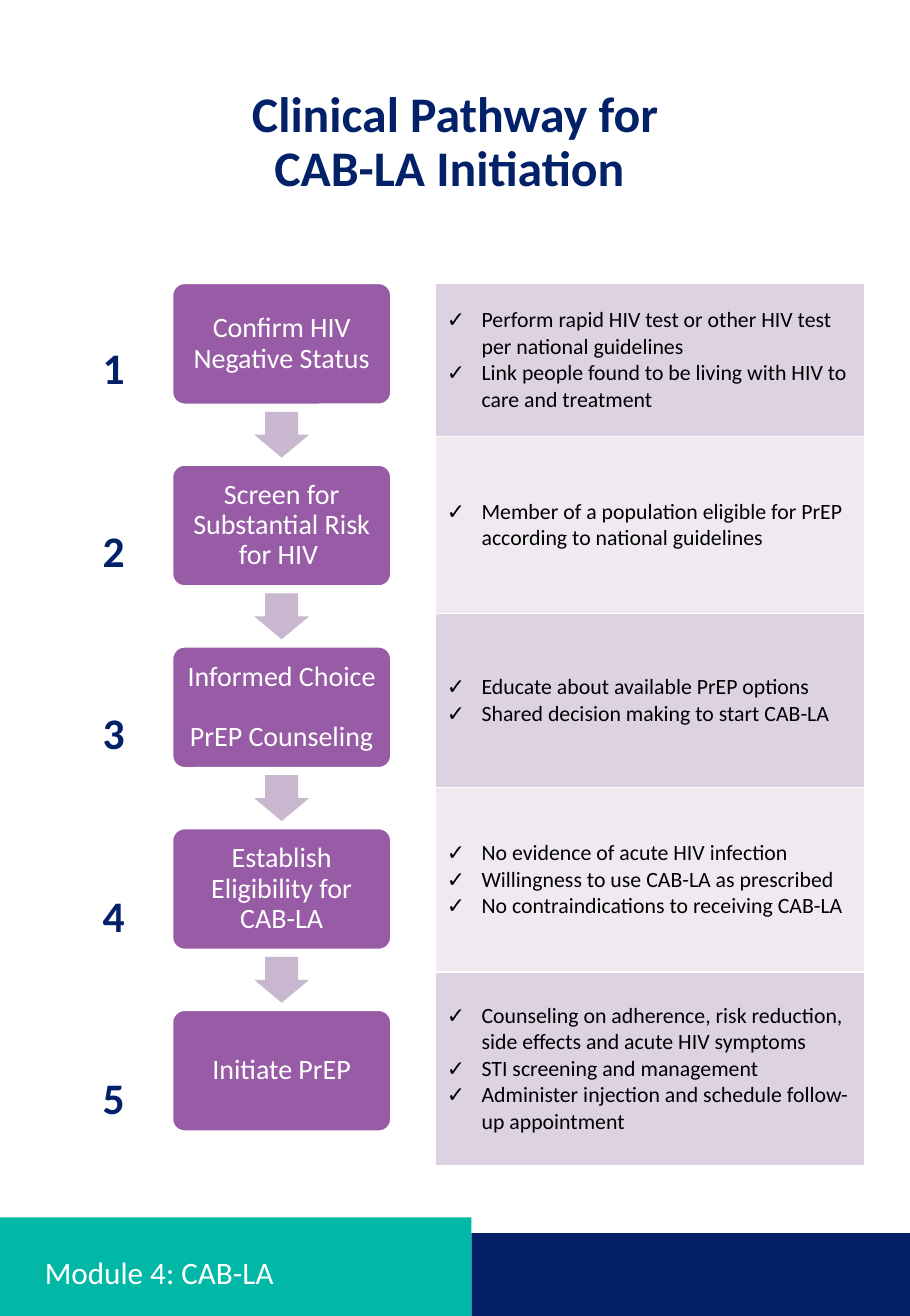
from lxml import etree
from pptx import Presentation
from pptx.dml.color import RGBColor
from pptx.enum.shapes import MSO_SHAPE
from pptx.enum.text import MSO_ANCHOR, MSO_AUTO_SIZE, PP_ALIGN
from pptx.oxml.ns import qn
from pptx.util import Inches, Pt

ROUNDED, DOWN_ARROW, RECTANGLE = (
    MSO_SHAPE.ROUNDED_RECTANGLE, MSO_SHAPE.DOWN_ARROW, MSO_SHAPE.RECTANGLE)
TOP, MIDDLE = MSO_ANCHOR.TOP, MSO_ANCHOR.MIDDLE
LEFT, CENTER = PP_ALIGN.LEFT, PP_ALIGN.CENTER

PAGE_WIDTH, PAGE_HEIGHT = 65 / 8, 47 / 4
NAVY, TEAL, PURPLE, LILAC = "022169", "00B8A5", "975CA5", "C9B6CF"
WHITE, BLACK = "FFFFFF", "000000"
BANDS = ("DDD2E1", "EFEAF0")

# Step label, height of its checklist row, checklist
STEPS = [
    ("Confirm HIV Negative Status", 1.37, [
        "Perform rapid HIV test or other HIV test per national guidelines",
        "Link people found to be living with HIV to care and treatment"]),
    ("Screen for Substantial Risk for HIV ", 1.58, [
        "Member of a population eligible for PrEP according to national guidelines"]),
    ("Informed Choice \vPrEP Counseling", 1.55, [
        "Educate about available PrEP options",
        "Shared decision making to start CAB-LA"]),
    ("Establish Eligibility for CAB-LA", 1.65, [
        "No evidence of acute HIV infection",
        "Willingness to use CAB-LA as prescribed",
        "No contraindications to receiving CAB-LA"]),
    ("Initiate PrEP", 1.73, [
        "Counseling on adherence, risk reduction, side effects and acute HIV symptoms",
        "STI screening and management",
        "Administer injection and schedule follow-up appointment"]),
]

# Columns and rows of the pathway
PATHWAY_TOP, LAST_STEP_TOP = 2.53, 9.02
STEP_LEFT, STEP_WIDTH, STEP_HEIGHT = 1.54, 1.95, 1.08
STEP_PITCH = (LAST_STEP_TOP - PATHWAY_TOP) / (len(STEPS) - 1)
ARROW_WIDTH, ARROW_HEIGHT = 0.49, 0.41
NUMBER_LEFT, NUMBER_TOP, NUMBER_WIDTH, NUMBER_PITCH = 0.77, 2.3, 0.49, 1.63
CHECK_LEFT, CHECK_WIDTH, CHECK_INDENT = 3.89, 3.83, 0.31


def color(hex_string):
    return RGBColor.from_string(hex_string)


def inches(*lengths):
    return [Inches(length) for length in lengths]


def style_paragraph(para, size, ink, bold=False, align=LEFT, spacing=0.9):
    para.alignment = align
    para.line_spacing = spacing
    para.space_before = Pt(0)
    font = para.font
    font.name, font.size, font.bold = "Calibri", Pt(size), bold
    font.color.rgb = color(ink)


def set_bullet(para, character):
    properties = para._p.get_or_add_pPr()
    properties.set("marL", str(Inches(CHECK_INDENT)))
    properties.set("indent", str(-Inches(CHECK_INDENT)))
    etree.SubElement(properties, qn("a:buFont")).set("typeface", "Calibri")
    etree.SubElement(properties, qn("a:buChar")).set("char", character)


def fill_placeholder(holder, text, place, anchor, **style):
    holder.left, holder.top, holder.width, holder.height = inches(*place)
    frame = holder.text_frame
    frame.text = text
    frame.auto_size = MSO_AUTO_SIZE.NONE
    frame.vertical_anchor = anchor
    para = frame.paragraphs[0]
    properties = para._p.get_or_add_pPr()
    properties.set("marL", "0")
    properties.set("indent", "0")
    etree.SubElement(properties, qn("a:buNone"))
    style_paragraph(para, **style)


def add_block(page, kind, place, fill):
    block = page.shapes.add_shape(kind, *inches(*place))
    block.shadow.inherit = False
    block.fill.solid()
    block.fill.fore_color.rgb = color(fill)
    block.line.fill.background()
    return block


def add_footer_bar(page, place, fill):
    bar = add_block(page, RECTANGLE, place, fill)
    # Behind the placeholders
    page.shapes._spTree.insert(2, bar._element)


def add_step(page, top, label):
    box = add_block(page, ROUNDED, (STEP_LEFT, top, STEP_WIDTH, STEP_HEIGHT), PURPLE)
    box.adjustments[0] = 0.1
    box.line.color.rgb = color(WHITE)
    box.line.width = Pt(1)
    frame = box.text_frame
    frame.word_wrap = True
    frame.vertical_anchor = MIDDLE
    frame.text = label
    style_paragraph(frame.paragraphs[0], 18, WHITE, align=CENTER)


def add_step_arrow(page, step_top):
    left = STEP_LEFT + (STEP_WIDTH - ARROW_WIDTH) / 2
    top = step_top + (STEP_HEIGHT + STEP_PITCH - ARROW_HEIGHT) / 2
    arrow = add_block(page, DOWN_ARROW, (left, top, ARROW_WIDTH, ARROW_HEIGHT), LILAC)
    arrow.adjustments[0], arrow.adjustments[1] = 0.6, 0.5


def add_column(page, left, top, width, heights):
    """Add a one-column table and return its cells."""
    frame = page.shapes.add_table(len(heights), 1, *inches(left, top, width, sum(heights)))
    table = frame.table
    table.first_row = table.horz_banding = False
    for row, height in zip(table.rows, heights):
        row.height = Inches(height)
    return list(table.iter_cells())


def set_cell_borders(cell, ink):
    properties = cell._tc.get_or_add_tcPr()
    for index, side in enumerate(("lnL", "lnR", "lnT", "lnB")):
        line = etree.Element(qn(f"a:{side}"), w=str(Pt(1)))
        fill = etree.SubElement(line, qn("a:solidFill"))
        etree.SubElement(fill, qn("a:srgbClr")).set("val", ink)
        properties.insert(index, line)


def add_numbers(page):
    heights = [NUMBER_PITCH] * len(STEPS)
    cells = add_column(page, NUMBER_LEFT, NUMBER_TOP, NUMBER_WIDTH, heights)
    for number, cell in enumerate(cells, start=1):
        cell.fill.background()
        set_cell_borders(cell, WHITE)
        cell.text = str(number)
        style_paragraph(cell.text_frame.paragraphs[0], 28, NAVY, True, CENTER, 2.5)


def add_checklists(page):
    heights = [height for _, height, _ in STEPS]
    cells = add_column(page, CHECK_LEFT, PATHWAY_TOP, CHECK_WIDTH, heights)
    for index, (cell, (_, _, checks)) in enumerate(zip(cells, STEPS)):
        cell.fill.solid()
        cell.fill.fore_color.rgb = color(BANDS[index % 2])
        set_cell_borders(cell, WHITE)
        cell.vertical_anchor = MIDDLE
        cell.text = "\n".join(checks)
        for para in cell.text_frame.paragraphs:
            set_bullet(para, "✓")
            style_paragraph(para, 14, BLACK, spacing=1.0)


def main():
    deck = Presentation()
    deck.slide_width, deck.slide_height = inches(PAGE_WIDTH, PAGE_HEIGHT)
    page = deck.slides.add_slide(deck.slide_layouts[1])

    # Heading and module name
    fill_placeholder(page.placeholders[1], "Clinical Pathway for CAB-LA Initiation ",
                     (1.89, 0.75, 4.35, 1.42), TOP,
                     size=32, ink=NAVY, bold=True, align=CENTER)
    fill_placeholder(page.shapes.title, "Module 4: CAB-LA",
                     (0.3, 11.13, 3.59, 0.5), MIDDLE, size=20, ink=WHITE)

    # Footer bars
    teal_width, teal_top, navy_top = 4.21, 10.87, 11.01
    add_footer_bar(page, (0, teal_top, teal_width, PAGE_HEIGHT - teal_top), TEAL)
    add_footer_bar(page, (teal_width, navy_top, PAGE_WIDTH - teal_width,
                          PAGE_HEIGHT - navy_top), NAVY)

    # Steps joined by arrows
    for index, (label, _, _) in enumerate(STEPS):
        top = PATHWAY_TOP + index * STEP_PITCH
        add_step(page, top, label)
        if index < len(STEPS) - 1:
            add_step_arrow(page, top)

    # Step numbers and checklists
    add_numbers(page)
    add_checklists(page)
    deck.save("out.pptx")


if __name__ == "__main__":
    main()
